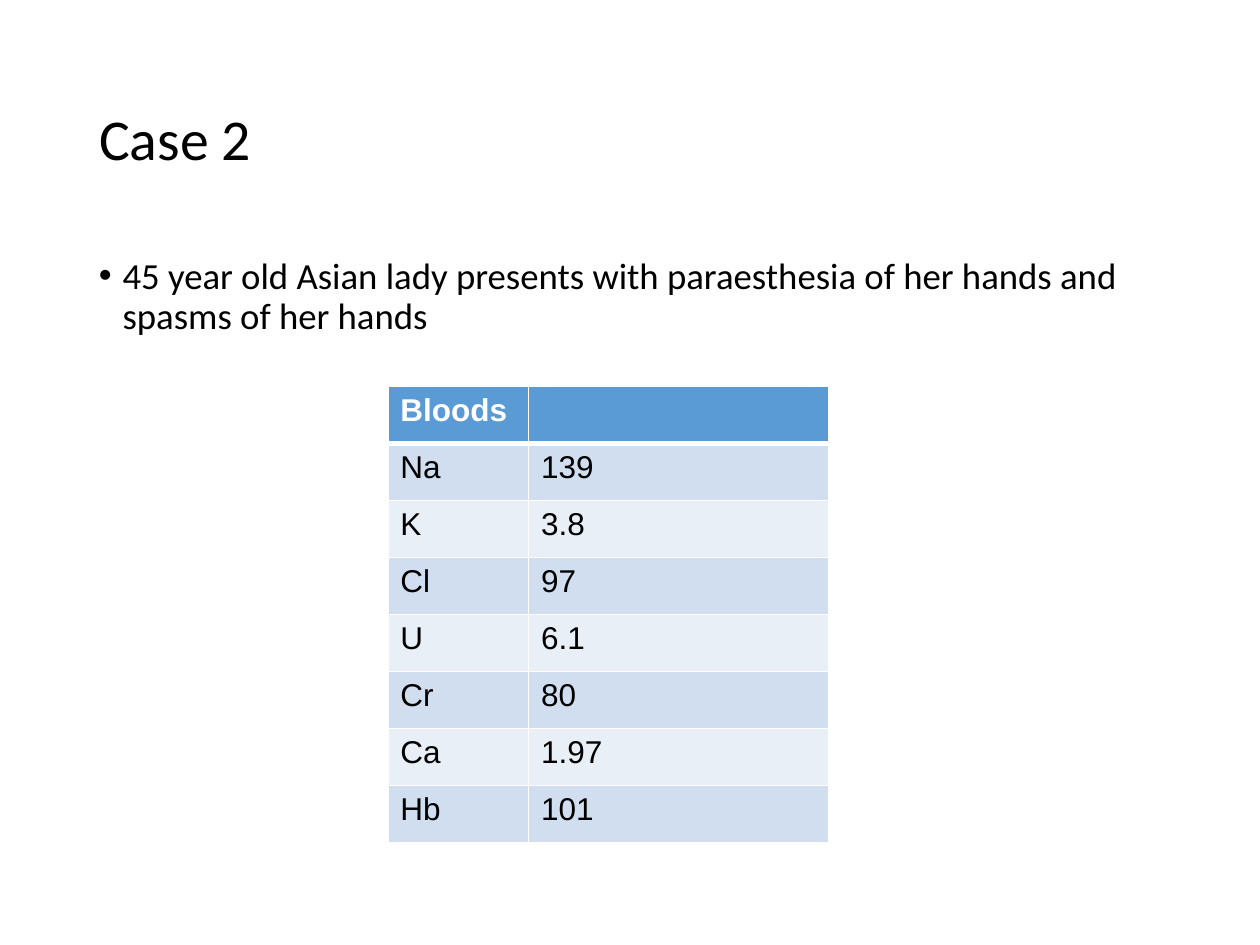
import pptx
import pptx.dml.color
import pptx.enum.text
import pptx.oxml
import pptx.oxml.ns
import pptx.util
from lxml import etree

Pt = pptx.util.Pt
RGBColor = pptx.dml.color.RGBColor
qn = pptx.oxml.ns.qn

BLACK = RGBColor(0x00, 0x00, 0x00)
WHITE = RGBColor(0xFF, 0xFF, 0xFF)
HEADER = RGBColor(0x5B, 0x9B, 0xD5)
BAND_DARK = RGBColor(0xD0, 0xDE, 0xEF)
BAND_LIGHT = RGBColor(0xE9, 0xEF, 0xF7)

BLOODS = [
    ("Bloods", ""), ("Na", "139"), ("K", "3.8"), ("Cl", "97"),
    ("U", "6.1"), ("Cr", "80"), ("Ca", "1.97"), ("Hb", "101"),
]


def place(sp, box):
    sp.left, sp.top, sp.width, sp.height = (Pt(v) for v in box)


def add_run(p, text, font, size, color, bold=False):
    r = p.add_run()
    r.text = text
    r.font.name, r.font.size, r.font.bold = font, Pt(size), bold
    r.font.color.rgb = color


def set_title(s, box, text):
    sp = s.shapes.title
    place(sp, box)
    tf = sp.text_frame
    tf.word_wrap = True
    tf.auto_size = pptx.enum.text.MSO_AUTO_SIZE.NONE
    tf.vertical_anchor = pptx.enum.text.MSO_ANCHOR.MIDDLE
    p = tf.paragraphs[0]
    p.alignment = pptx.enum.text.PP_ALIGN.LEFT
    p.line_spacing = 0.9
    add_run(p, text, "Calibri", 33, BLACK)


def add_bullet_text(s, box, text):
    tf = s.shapes.add_textbox(*(Pt(v) for v in box)).text_frame
    tf.word_wrap = True
    p = tf.paragraphs[0]
    p.line_spacing = 0.9
    # Hanging bullet
    pPr = p._p.get_or_add_pPr()
    pPr.set("marL", str(Pt(13.5)))
    pPr.set("indent", str(-Pt(13.5)))
    etree.SubElement(pPr, qn("a:buFont"), typeface="Arial")
    etree.SubElement(pPr, qn("a:buChar"), char="•")
    add_run(p, text, "Calibri", 21, BLACK)


def set_borders(cell, top, bottom):
    tcPr = cell._tc.get_or_add_tcPr()
    for side, width in (("L", 1), ("R", 1), ("T", top), ("B", bottom)):
        ln = etree.SubElement(tcPr, qn(f"a:ln{side}"), w=str(Pt(width)))
        fill = etree.SubElement(ln, qn("a:solidFill"))
        etree.SubElement(fill, qn("a:srgbClr"), val=str(WHITE))


def add_bloods_table(s, box, col_widths, rows):
    shape = s.shapes.add_table(len(rows), len(col_widths), *(Pt(v) for v in box))
    table = shape.table
    for col, width in zip(table.columns, col_widths):
        col.width = Pt(width)
    for i, values in enumerate(rows):
        header = i == 0
        band = BAND_DARK if i % 2 else BAND_LIGHT
        for j, text in enumerate(values):
            cell = table.cell(i, j)
            set_borders(cell, 3 if i == 1 else 1, 3 if header else 1)
            cell.fill.solid()
            cell.fill.fore_color.rgb = HEADER if header else band
            if text:
                add_run(cell.text_frame.paragraphs[0], text, "Arial", 18,
                        WHITE if header else BLACK, header)


def main():
    prs = pptx.Presentation()
    prs.slide_width, prs.slide_height = Pt(720), Pt(540)
    s = prs.slides.add_slide(prs.slide_layouts[5])
    set_title(s, (49.5, 28.75, 621, 104.4), "Case 2")
    add_bullet_text(s, (49.5, 143.75, 621, 342.6),
                    "45 year old Asian lady presents with paraesthesia "
                    "of her hands and spasms of her hands")
    add_bloods_table(s, (221.6, 221, 252, 260.4), (80.4, 171.6), BLOODS)
    prs.save("out.pptx")


if __name__ == "__main__":
    main()
